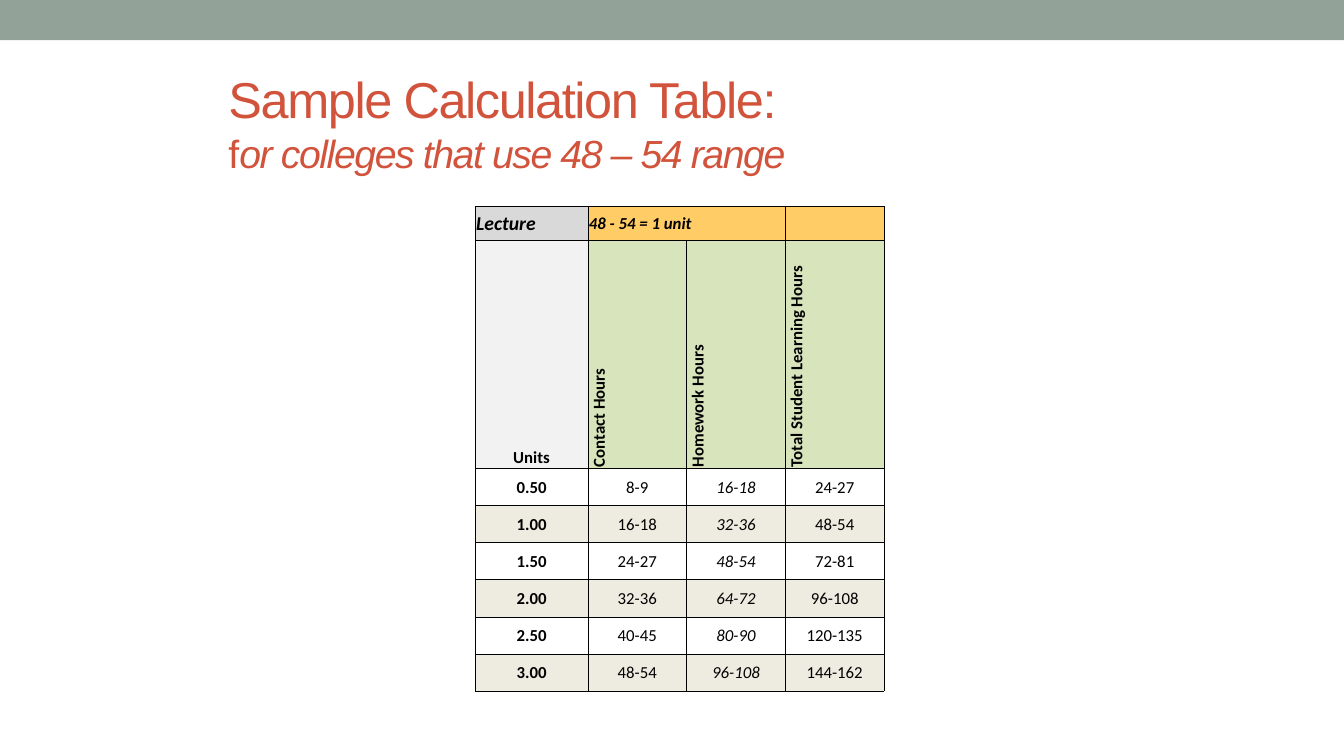
from dataclasses import dataclass
from typing import Any

from lxml.etree import SubElement as Sub
from pptx import Presentation
from pptx.dml.color import RGBColor as Rgb
from pptx.enum.shapes import MSO_SHAPE as Shape
from pptx.enum.text import MSO_ANCHOR as Anchor, MSO_AUTO_SIZE as Fit, PP_ALIGN as Align
from pptx.oxml.ns import qn
from pptx.util import Pt


@dataclass(frozen=True)
class Theme:
    head: str = "Arial"
    body: str = "Calibri"
    band: str = "93A299"
    title: str = "D2533C"
    ink: str = "000000"
    gray: str = "D9D9D9"
    pale: str = "F2F2F2"
    gold: str = "FFCC66"
    green: str = "D8E4BC"
    sand: str = "EEECE1"
    white: str = "FFFFFF"
    big: float = 36
    sub: float = 28
    label: float = 14
    text: float = 12


THEME = Theme()


@dataclass(frozen=True)
class Entry:
    text: str
    fill: str
    bold: bool = False
    slant: bool = False
    size: float = THEME.text
    align: Any = Align.CENTER
    anchor: Any = Anchor.MIDDLE
    turned: bool = False


def apply(item: Any, values: dict[str, Any]) -> None:
    for name, value in values.items():
        setattr(item, name, value)


def add_run(par: Any, text: str, color: str, **values: Any) -> Any:
    run = par.add_run()
    run.text = text
    apply(run.font, values)
    run.font.color.rgb = Rgb.from_string(color)
    return run


def add_band(slide: Any) -> None:
    band = slide.shapes.add_shape(Shape.RECTANGLE, 0, 0, Pt(960), Pt(28.8))
    band.shadow.inherit = False
    band.fill.solid()
    band.fill.fore_color.rgb = Rgb.from_string(THEME.band)
    band.line.fill.background()


def set_title(slide: Any) -> None:
    title = slide.shapes.title
    apply(title, dict(left=Pt(156), top=Pt(42), width=Pt(648), height=Pt(90.5)))
    frame = title.text_frame
    apply(frame, dict(word_wrap=True, auto_size=Fit.NONE, vertical_anchor=Anchor.MIDDLE))
    par = frame.paragraphs[0]
    par.alignment = Align.LEFT
    parts = (
        ("Sample Calculation Table: ", THEME.big, False),
        ("f", THEME.sub, False),
        ("or colleges that use 48 – 54 range", THEME.sub, True),
    )
    for index, (text, size, slant) in enumerate(parts):
        if index == 1:
            par.add_line_break()
        run = add_run(par, text, THEME.title, name=THEME.head, size=Pt(size), italic=slant)
        run.font._element.set("spc", "-100")


def add_border(cell: Any) -> None:
    props = cell._tc.get_or_add_tcPr()
    for side in ("lnL", "lnR", "lnT", "lnB"):
        line = Sub(props, qn(f"a:{side}"), w=str(Pt(0.5)))
        Sub(Sub(line, qn("a:solidFill")), qn("a:srgbClr"), val=THEME.ink)


def fill_cell(cell: Any, entry: Entry) -> None:
    add_border(cell)
    edge = Pt(0.72)
    apply(cell, dict(margin_left=edge, margin_right=edge, margin_top=edge,
                     margin_bottom=0, vertical_anchor=entry.anchor))
    cell.fill.solid()
    cell.fill.fore_color.rgb = Rgb.from_string(entry.fill)
    if entry.turned:
        cell._tc.get_or_add_tcPr().set("vert", "vert270")
    par = cell.text_frame.paragraphs[0]
    par.alignment = entry.align
    if entry.text:
        add_run(par, entry.text, THEME.ink, name=THEME.body, size=Pt(entry.size),
                bold=entry.bold, italic=entry.slant)


def unit_row(step: int) -> list[Entry]:
    """Each half unit adds 8-9 contact hours and twice that in homework."""
    fill = THEME.white if step % 2 else THEME.sand
    hours = [Entry(f"{8 * step * part}-{9 * step * part}", fill, slant=part == 2)
             for part in (1, 2, 3)]
    return [Entry(f"{step / 2:.2f}", fill, bold=True), *hours]


def add_grid(slide: Any) -> None:
    blank = Entry("", THEME.gold)
    top = [
        Entry("Lecture", THEME.gray, True, True, THEME.label, Align.JUSTIFY),
        Entry("48 - 54 = 1 unit", THEME.gold, True, True, align=Align.JUSTIFY),
        blank,
        blank,
    ]
    names = ("Contact Hours", "Homework Hours", "Total Student Learning Hours")
    heads = [Entry("Units", THEME.pale, True, anchor=Anchor.BOTTOM)]
    heads += [Entry(name, THEME.green, True, align=Align.JUSTIFY, turned=True)
              for name in names]
    rows = [top, heads, *(unit_row(step) for step in range(1, 7))]
    widths = (80.6, 70.5, 70.5, 70.5)
    heights = (24, 163, *[26.55] * 6)
    table = slide.shapes.add_table(len(rows), len(widths), Pt(339.4), Pt(147.5),
                                   Pt(sum(widths)), Pt(sum(heights))).table
    apply(table, dict(first_row=False, horz_banding=False))
    for column, width in zip(table.columns, widths):
        column.width = Pt(width)
    for r, (row, height) in enumerate(zip(rows, heights)):
        table.rows[r].height = Pt(height)
        for c, entry in enumerate(row):
            fill_cell(table.cell(r, c), entry)
    table.cell(0, 1).merge(table.cell(0, 2))


def main() -> None:
    deck = Presentation()
    apply(deck, dict(slide_width=Pt(960), slide_height=Pt(540)))
    slide = deck.slides.add_slide(deck.slide_layouts.get_by_name("Title Only"))
    add_band(slide)
    set_title(slide)
    add_grid(slide)
    deck.save("out.pptx")


if __name__ == "__main__":
    main()
